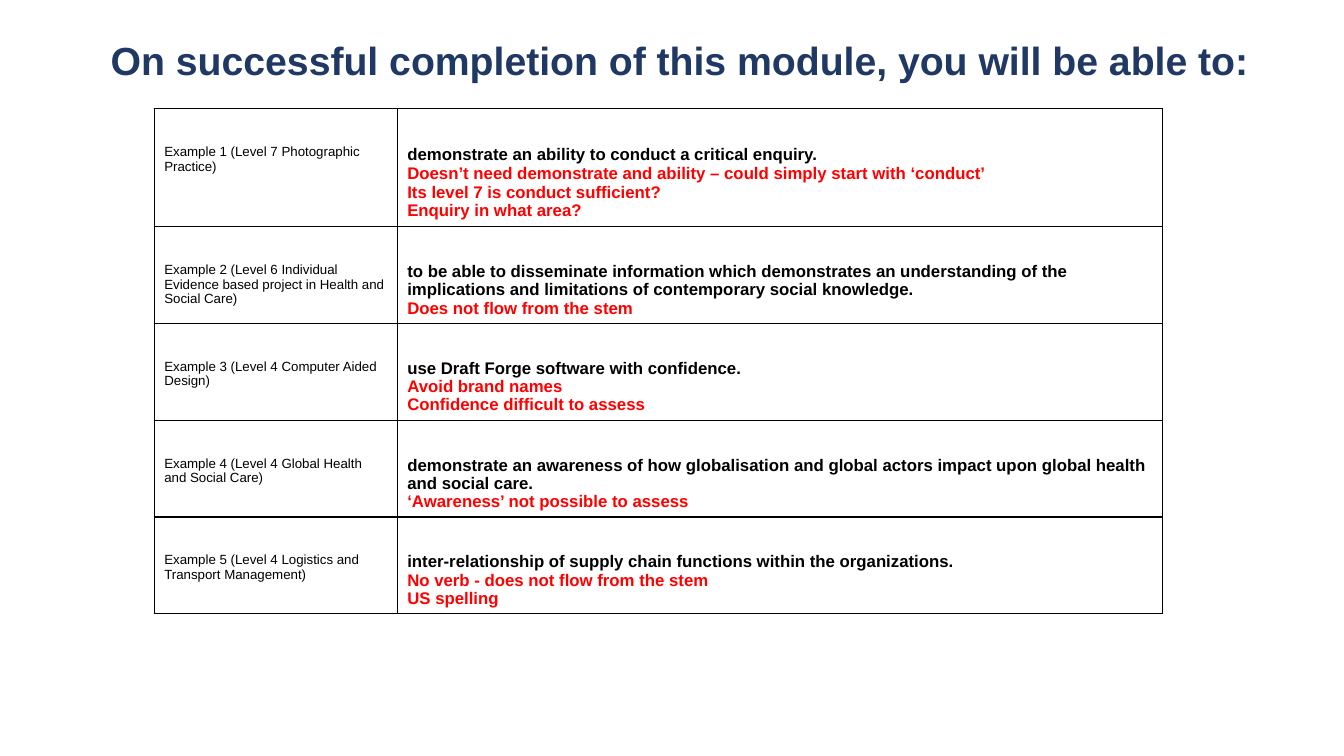
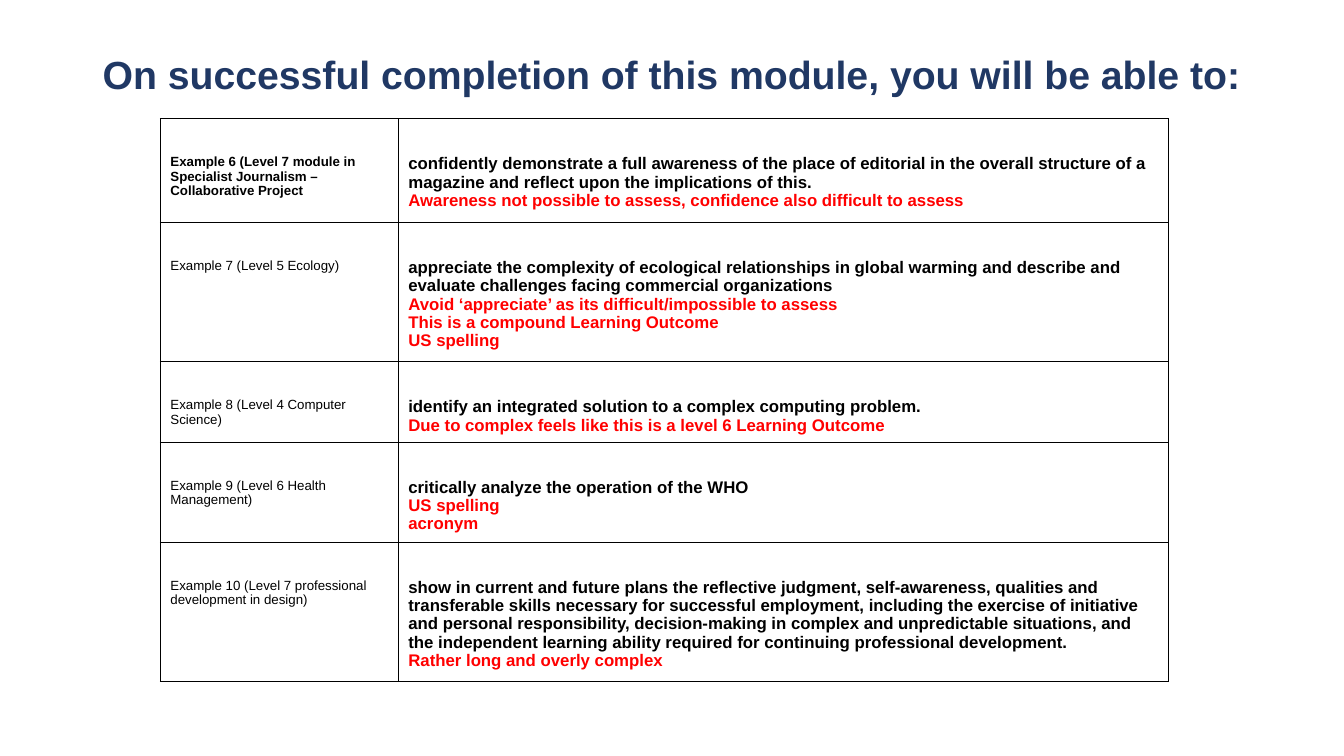
from pptx import Presentation
from pptx.dml.color import RGBColor
from pptx.oxml import parse_xml
from pptx.oxml.ns import nsdecls
from pptx.util import Inches, Pt

FONT = "Arial"
NAVY, BLACK, RED, WHITE = "203864", "000000", "FF0000", "FFFFFF"
TITLE = "On successful completion of this module, you will be able to:"
LABEL_SIZE, OUTCOME_SIZE, TITLE_SIZE = 9.5, 12, 28
LEADING = 0.97

# Each row: height, example, learning outcome, feedback lines
SLIDES = [
    {
        "title_at": (1, 0.31, 11.7, 0.57),
        "table_at": (1.53, 1.08),
        "columns": (2.41, 7.59),
        "border": 1,
        "first_label_bold": False,
        "first_leading": 1.0,
        "rows": [
            (1.17, "Example 1 (Level 7 Photographic Practice)",
             "demonstrate an ability to conduct a critical enquiry.",
             ["Doesn’t need demonstrate and ability – could simply start with ‘conduct’",
              "Its level 7 is conduct sufficient?",
              "Enquiry in what area?"]),
            (0.96, "Example 2 (Level 6 Individual Evidence based project in Health and Social Care)",
             "to be able to disseminate information which demonstrates an understanding of the "
             "implications and limitations of contemporary social knowledge.",
             ["Does not flow from the stem"]),
            (0.96, "Example 3 (Level 4 Computer Aided Design)",
             "use Draft Forge software with confidence.",
             ["Avoid brand names", "Confidence difficult to assess"]),
            (0.96, "Example 4 (Level 4 Global Health and Social Care)",
             "demonstrate an awareness of how globalisation and global actors impact upon "
             "global health and social care.",
             ["‘Awareness’ not possible to assess"]),
            (0.96, "Example 5 (Level 4 Logistics and Transport Management)",
             "inter-relationship of supply chain functions within the organizations.",
             ["No verb - does not flow from the stem", "US spelling"]),
        ],
    },
    {
        "title_at": (0.92, 0.45, 11.6, 0.57),
        "table_at": (1.59, 1.18),
        "columns": (2.36, 7.64),
        "border": 0.75,
        "first_label_bold": True,
        "first_leading": LEADING,
        "rows": [
            (1.03, "Example 6 (Level 7 module in Specialist Journalism – Collaborative Project",
             "confidently demonstrate a full awareness of the place of editorial in the overall "
             "structure of a magazine and reflect upon the implications of this.",
             ["Awareness not possible to assess, confidence also difficult to assess"]),
            (1.34, "Example 7 (Level 5 Ecology)",
             "appreciate the complexity of ecological relationships in global warming and "
             "describe and evaluate challenges facing commercial organizations",
             ["Avoid ‘appreciate’ as its difficult/impossible to assess",
              "This is a compound Learning Outcome",
              "US spelling"]),
            (0.77, "Example 8 (Level 4 Computer Science)",
             "identify an integrated solution to a complex computing problem.",
             ["Due to complex feels like this is a level 6 Learning Outcome"]),
            (0.97, "Example 9 (Level 6 Health Management)",
             "critically analyze the operation of the WHO",
             ["US spelling", "acronym"]),
            (1.34, "Example 10 (Level 7 professional development in design)",
             "show in current and future plans the reflective judgment, self-awareness, "
             "qualities and transferable skills necessary for successful employment, including "
             "the exercise of initiative and personal responsibility, decision-making in "
             "complex and unpredictable situations, and the independent learning ability "
             "required for continuing professional development.",
             ["Rather long and overly complex"]),
        ],
    },
]


def rgb(color):
    return RGBColor.from_string(color)


def write(tf, lines, size, bold, leading=1.0):
    """Fill a text frame with one paragraph per (text, colour) pair."""
    tf.text = "\n".join(text for text, _ in lines)
    for p, (_, color) in zip(tf.paragraphs, lines):
        p.line_spacing = leading
        for r in p.runs:
            r.font.name, r.font.size, r.font.bold = FONT, Pt(size), bold
            r.font.color.rgb = rgb(color)


def style_cell(cell, border):
    cell.margin_top = Inches(0.36)
    tc_pr = cell._tc.get_or_add_tcPr()
    for side in ("lnL", "lnR", "lnT", "lnB"):
        tc_pr.append(parse_xml(
            f'<a:{side} {nsdecls("a")} w="{Pt(border)}"><a:solidFill>'
            f'<a:srgbClr val="{BLACK}"/></a:solidFill></a:{side}>'))
    cell.fill.solid()
    cell.fill.fore_color.rgb = rgb(WHITE)


def add_title(s, at):
    tf = s.shapes.add_textbox(*map(Inches, at)).text_frame
    tf.word_wrap = True
    write(tf, [(TITLE, NAVY)], TITLE_SIZE, True)


def add_examples(s, content):
    rows, columns = content["rows"], content["columns"]
    size = sum(columns), sum(row[0] for row in rows)
    table = s.shapes.add_table(len(rows), len(columns),
                               *map(Inches, content["table_at"] + size)).table
    table.first_row = table.horz_banding = False
    for column, width in zip(table.columns, columns):
        column.width = Inches(width)
    for i, (height, label, outcome, feedback) in enumerate(rows):
        table.rows[i].height = Inches(height)
        label_cell, outcome_cell = table.cell(i, 0), table.cell(i, 1)
        for cell in (label_cell, outcome_cell):
            style_cell(cell, content["border"])
        first = i == 0
        write(label_cell.text_frame, [(label, BLACK)], LABEL_SIZE,
              first and content["first_label_bold"], LEADING)
        lines = [(outcome, BLACK)] + [(line, RED) for line in feedback]
        write(outcome_cell.text_frame, lines, OUTCOME_SIZE, True,
              content["first_leading"] if first else LEADING)


def main():
    prs = Presentation()
    prs.slide_width, prs.slide_height = Inches(13.33), Inches(7.5)
    for content in SLIDES:
        s = prs.slides.add_slide(prs.slide_layouts[6])
        add_examples(s, content)
        add_title(s, content["title_at"])
    prs.save("out.pptx")


if __name__ == "__main__":
    main()
